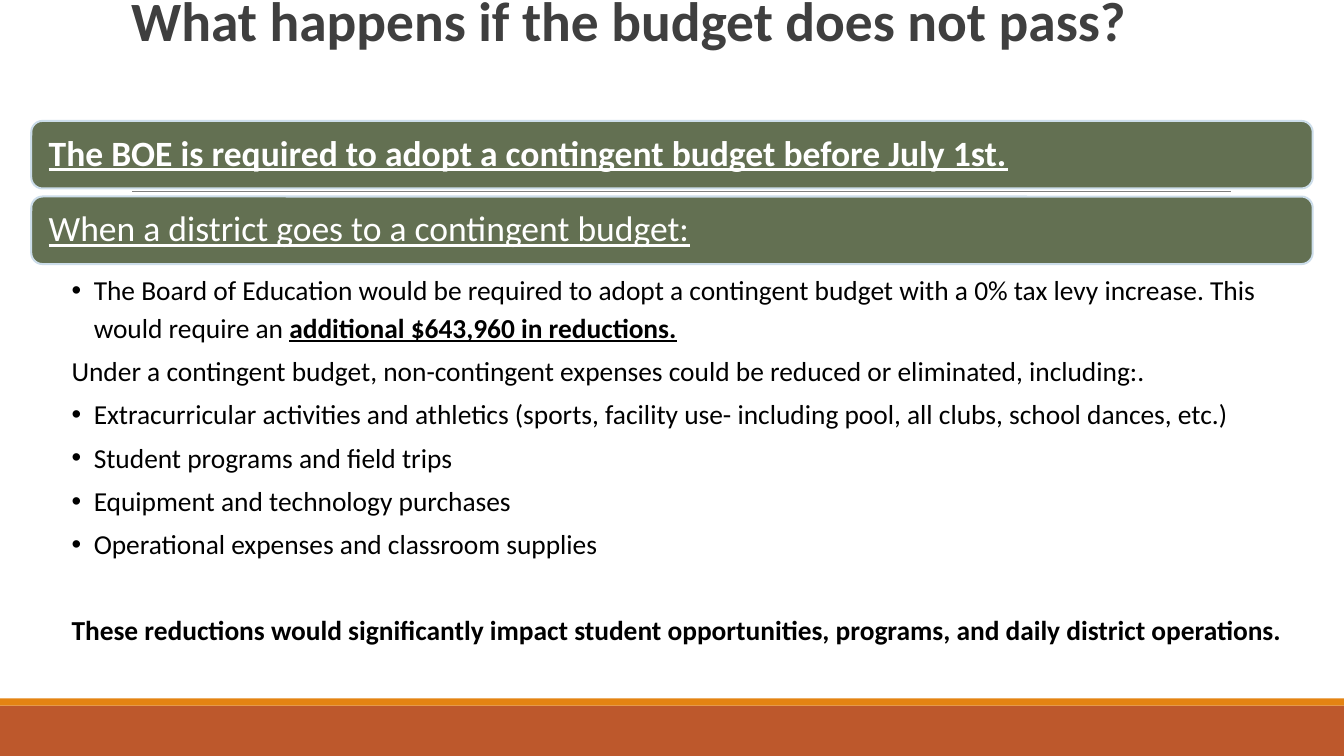
import pptx
import pptx.util
import pptx.dml.color
import pptx.enum.shapes
import pptx.enum.text
import pptx.oxml.ns
import lxml.etree

Inches = pptx.util.Inches
Pt = pptx.util.Pt
THEME = {
    "font": "Calibri",
    "title": "3F3F3F", "body": "000000", "bar_text": "FFFFFF",
    "bar": "637052", "bar_line": "CCDDEA", "rule": "7F7F7F",
    "footer": "BD582C", "accent": "E48312",
    "title_size": 39.6, "bar_size": 25.4, "body_size": 19.6,
}


def color(name):
    return pptx.dml.color.RGBColor.from_string(THEME[name])


def write_run(paragraph, text, style, **formats):
    run = paragraph.add_run()
    run.text = text
    run.font.color.rgb = color(style)
    values = {"name": THEME["font"], "bold": False, "underline": False, **formats}
    for attribute, value in values.items():
        setattr(run.font, attribute, value)


presentation = pptx.Presentation()
presentation.slide_width = Inches(13.33)
presentation.slide_height = Inches(7.5)
slide = presentation.slides.add_slide(presentation.slide_layouts[1])
shapes = slide.shapes

for top, height, fill in [(7, 0.5, "footer"), (6.93, 0.07, "accent")]:
    band = shapes.add_shape(
        pptx.enum.shapes.MSO_SHAPE.RECTANGLE,
        Inches(0), Inches(top), Inches(13.33), Inches(height))
    band.shadow.inherit = False
    band.fill.solid()
    band.fill.fore_color.rgb = color(fill)
    band.line.fill.background()

rule = shapes.add_connector(
    pptx.enum.shapes.MSO_CONNECTOR.STRAIGHT,
    Inches(1.31), Inches(1.9), Inches(12.21), Inches(1.9))
rule.line.color.rgb = color("rule")
rule.line.width = Pt(0.75)
lxml.etree.SubElement(rule._element.spPr, pptx.oxml.ns.qn("a:effectLst"))

title = shapes.title
body = slide.placeholders[1]
anchors = pptx.enum.text.MSO_ANCHOR
for placeholder, bounds, insets, anchor in [
    (title, (1.2, 0.31, 11, 0.89), (0.1, 0.05, 0.1, 0.68), anchors.BOTTOM),
    (body, (0.31, 2.62, 12.71, 4.3), (0.4, 0.04, 0.2, 0.04), anchors.TOP),
]:
    for attribute, value in zip(("left", "top", "width", "height"), bounds):
        setattr(placeholder, attribute, Inches(value))
    frame = placeholder.text_frame
    for side, value in zip(("left", "top", "right", "bottom"), insets):
        setattr(frame, "margin_" + side, Inches(value))
    frame.auto_size = pptx.enum.text.MSO_AUTO_SIZE.NONE
    frame.word_wrap = True
    frame.vertical_anchor = anchor

paragraph = title.text_frame.paragraphs[0]
paragraph.alignment = pptx.enum.text.PP_ALIGN.LEFT
paragraph.line_spacing = 0.85
write_run(paragraph, "What happens if the budget does not pass?", "title",
          size=Pt(THEME["title_size"]), bold=True)

bars = [
    ("The BOE is required to adopt a contingent budget before July 1st.", True),
    ("When a district goes to a contingent budget:", False),
]
for index, (text, bold) in enumerate(bars):
    bar = shapes.add_shape(
        pptx.enum.shapes.MSO_SHAPE.ROUNDED_RECTANGLE,
        Inches(0.31), Inches(1.2 + 0.75 * index), Inches(12.71), Inches(0.67))
    bar.shadow.inherit = False
    bar.fill.solid()
    bar.fill.fore_color.rgb = color("bar")
    bar.line.color.rgb = color("bar_line")
    bar.line.width = Pt(1.44)
    frame = bar.text_frame
    frame.word_wrap = True
    frame.vertical_anchor = anchors.MIDDLE
    frame.margin_left = frame.margin_right = Inches(0.14)
    paragraph = frame.paragraphs[0]
    paragraph.alignment = pptx.enum.text.PP_ALIGN.LEFT
    paragraph.line_spacing = 0.9
    write_run(paragraph, text, "bar_text", size=Pt(THEME["bar_size"]),
              bold=bold, underline=True)

plain = {}
strong = {"bold": True}
key_figure = {"bold": True, "underline": True}
consequences = [
    (True, 0, [
        ("The Board of Education would be required to adopt a contingent budget "
         "with a 0% tax levy increase. This would require an ", plain),
        ("additional $643,960 in reductions.", key_figure)]),
    (False, 3.9, [("Under a contingent budget, non-contingent expenses could be "
                   "reduced or eliminated, including:.", plain)]),
    (True, 3.9, [("Extracurricular activities and athletics (sports, facility use- "
                  "including pool, all clubs, school dances, etc.)", plain)]),
    (True, 3.9, [("Student programs and field trips", plain)]),
    (True, 3.9, [("Equipment and technology purchases", plain)]),
    (True, 3.9, [("Operational expenses and classroom supplies", plain)]),
    (False, 34.3, [("These reductions would significantly impact student "
                    "opportunities, programs, and daily district operations.", strong)]),
]
for index, (bulleted, space_before, runs) in enumerate(consequences):
    frame = body.text_frame
    paragraph = frame.add_paragraph() if index else frame.paragraphs[0]
    properties = paragraph._p.get_or_add_pPr()
    properties.set("marL", str(Inches(0.22)))
    properties.set("indent", str(-Inches(0.22)))
    if bulleted:
        bullet = lxml.etree.SubElement(properties, pptx.oxml.ns.qn("a:buChar"))
        bullet.set("char", "•")
    else:
        lxml.etree.SubElement(properties, pptx.oxml.ns.qn("a:buNone"))
    paragraph.line_spacing = 1.15
    paragraph.space_before = Pt(space_before)
    for text, formats in runs:
        write_run(paragraph, text, "body", size=Pt(THEME["body_size"]), **formats)

presentation.save("out.pptx")
